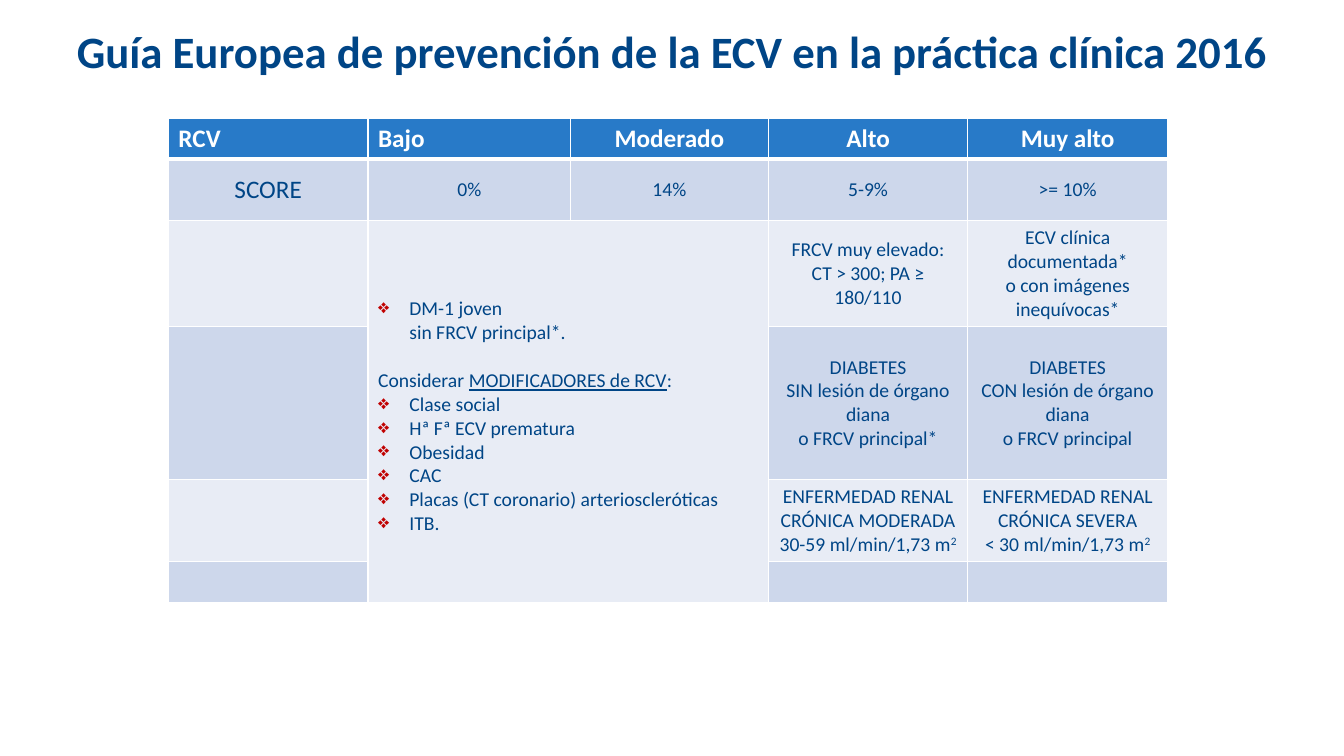
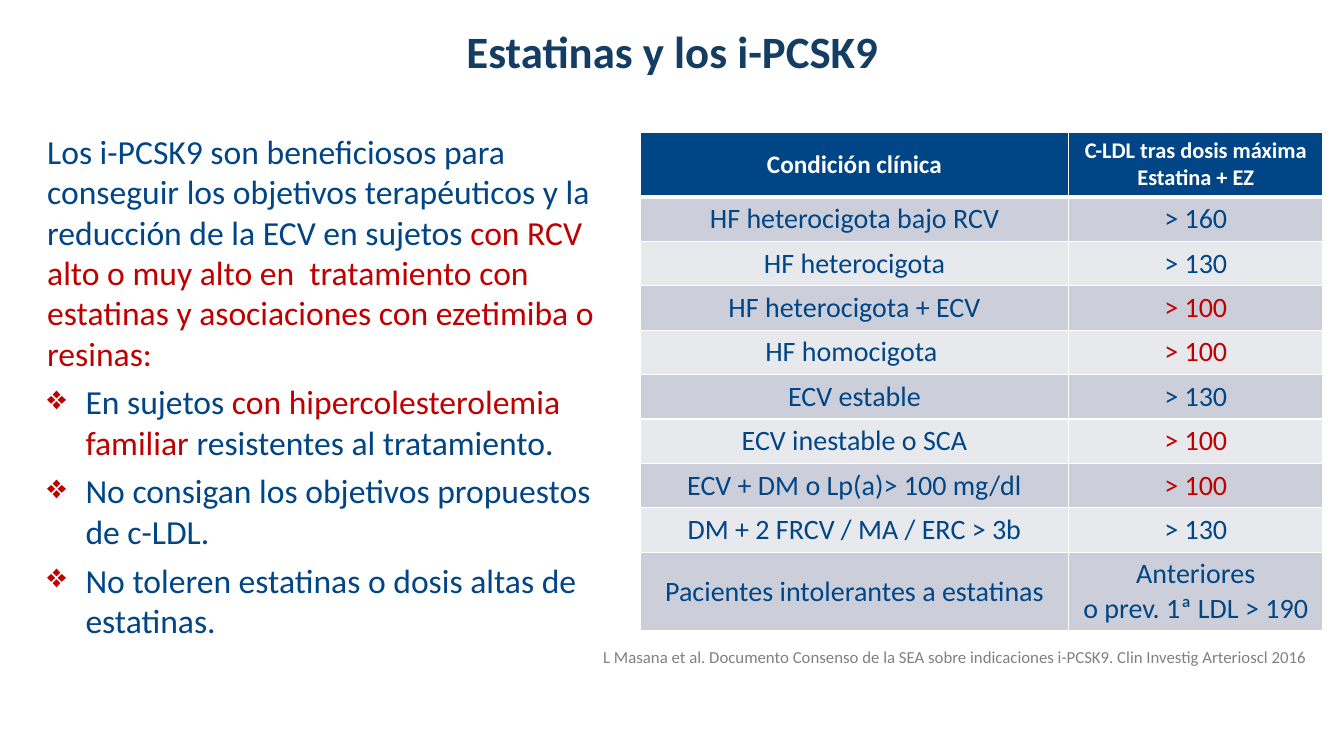
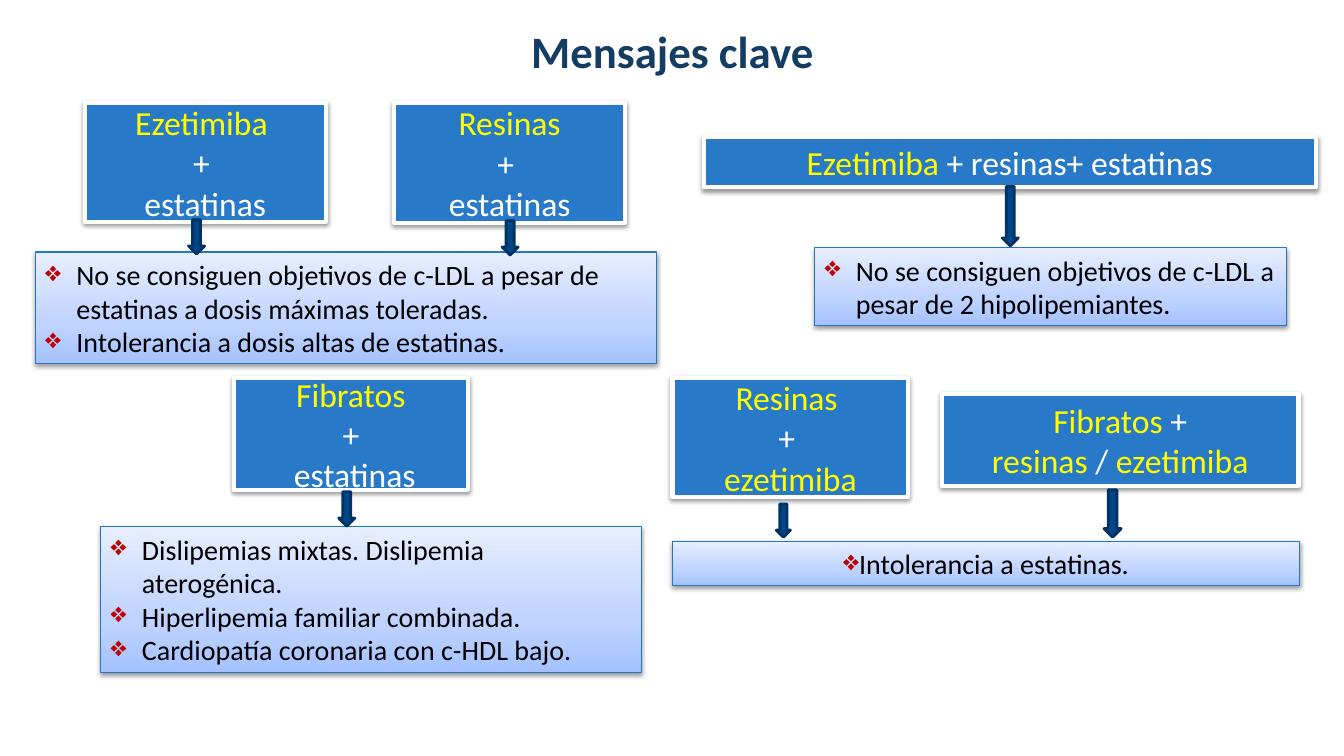
from copy import deepcopy

from lxml import etree
from pptx import Presentation
from pptx.dml.color import RGBColor
from pptx.enum.shapes import MSO_SHAPE
from pptx.enum.text import MSO_ANCHOR, PP_ALIGN
from pptx.oxml.ns import qn
from pptx.util import Inches, Pt

CENTER, LEFT, RIGHT = PP_ALIGN.CENTER, PP_ALIGN.LEFT, PP_ALIGN.RIGHT
MIDDLE, TOP = MSO_ANCHOR.MIDDLE, MSO_ANCHOR.TOP
RECTANGLE, DOWN_ARROW = MSO_SHAPE.RECTANGLE, MSO_SHAPE.DOWN_ARROW

COLORS = {
    "navy": "004586", "title": "143D64", "blue": "287AC8", "red": "C00000",
    "bullet": "C00000", "yellow": "FFFF00", "white": "FFFFFF", "black": "000000",
    "gray": "808080", "outline": "2377C8", "arrow_line": "003363",
    "risk_dark": "CDD7EB", "risk_light": "E8ECF5",
    "drug_dark": "CCCFD9", "drug_light": "E7E9ED",
}
GRADIENT = [(0, "A4C2FF"), (0.35, "BFD3FF"), (1, "E7EEFF")]
FONT = "Calibri"
BULLET = "❖"
BREAK = "\n"
RED = {"color": "red"}
YELLOW = {"color": "yellow"}
SUPERSCRIPT = {"baseline": "30000"}


def write_text(frame, paragraphs, align=CENTER, indent=0.31, space=0, **defaults):
    frame.word_wrap = True
    for index, runs in enumerate(paragraphs):
        paragraph = frame.add_paragraph() if index else frame.paragraphs[0]
        paragraph.alignment = align
        runs = [runs] if isinstance(runs, str) else list(runs)
        if runs[0] == BULLET:
            runs.pop(0)
            properties = paragraph._p.get_or_add_pPr()
            properties.set("marL", str(Inches(indent)))
            properties.set("indent", str(-Inches(indent)))
            color = etree.SubElement(properties, qn("a:buClr"))
            etree.SubElement(color, qn("a:srgbClr"), val=COLORS["bullet"])
            etree.SubElement(properties, qn("a:buChar"), char=BULLET)
        if index and space:
            paragraph.space_before = Pt(space)
        for item in runs:
            if item == BREAK:
                paragraph.add_line_break()
                etree.SubElement(paragraph._p[-1], qn("a:rPr"), sz=str(defaults["size"] * 100))
                continue
            text, changes = (item, {}) if isinstance(item, str) else item
            values = {"name": FONT, "bold": False, **defaults, **changes}
            run = paragraph.add_run()
            run.text = text
            run.font.color.rgb = RGBColor.from_string(COLORS[values.pop("color")])
            run.font.size = Pt(values.pop("size"))
            if "baseline" in values:
                run.font._element.set("baseline", values.pop("baseline"))
            for name, value in values.items():
                setattr(run.font, name, value)


def paint_cell(cell, color, top, bottom):
    properties = cell._tc.get_or_add_tcPr()
    for side, width in (("lnL", 1), ("lnR", 1), ("lnT", top), ("lnB", bottom)):
        line = etree.SubElement(properties, qn(f"a:{side}"), w=str(Pt(width)))
        fill = etree.SubElement(line, qn("a:solidFill"))
        etree.SubElement(fill, qn("a:srgbClr"), val=COLORS["white"])
    cell.fill.solid()
    cell.fill.fore_color.rgb = RGBColor.from_string(COLORS[color])


presentation = Presentation()
presentation.slide_width = Inches(13.33)
presentation.slide_height = Inches(7.5)

slides = []
for text, left, width, color in (
    ("Guía Europea de prevención de la ECV en la práctica clínica 2016", 0.29, 12.76, "navy"),
    ("Estatinas y los i-PCSK9", 0.67, 12, "title"),
    ("Mensajes clave", 0.67, 12, "title"),
):
    slide = presentation.slides.add_slide(presentation.slide_layouts[5])
    title = slide.shapes.title
    title.left, title.top = Inches(left), Inches(0.17)
    title.width, title.height = Inches(width), Inches(0.66)
    title.text_frame.vertical_anchor = MIDDLE
    write_text(title.text_frame, [text], size=32, color=color, bold=True)
    slides.append(slide)
risk_slide, statin_slide, message_slide = slides

modifiers = [
    [BULLET, "DM-1 joven", BREAK, "sin FRCV principal*."],
    ["Considerar ", ("MODIFICADORES de RCV", {"underline": True}), ":"],
    [BULLET, "Clase social"],
    [BULLET, "Hª Fª ECV prematura"],
    [BULLET, "Obesidad"],
    [BULLET, "CAC"],
    [BULLET, "Placas (CT coronario) arterioscleróticas"],
    [BULLET, "ITB."],
]
risk_rows = [
    [["RCV"], ["Bajo"], ["Moderado"], ["Alto"], ["Muy alto"]],
    [["SCORE"], ["0%"], ["14%"], ["5-9%"], [">= 10%"]],
    [[], modifiers, [],
     ["FRCV muy elevado:", "CT > 300; PA ≥ 180/110"],
     ["ECV clínica documentada*", "o con imágenes inequívocas*"]],
    [[], [], [],
     ["DIABETES", "SIN lesión de órgano diana", "o FRCV principal*"],
     ["DIABETES", "CON lesión de órgano diana", "o FRCV principal"]],
    [[], [], [],
     ["ENFERMEDAD RENAL CRÓNICA MODERADA", ["30-59 ml/min/1,73 m", ("2", SUPERSCRIPT)]],
     ["ENFERMEDAD RENAL CRÓNICA SEVERA", ["< 30 ml/min/1,73 m", ("2", SUPERSCRIPT)]]],
    [[], [], [], [], []],
]
statin_rows = [[["Condición clínica"], ["C-LDL tras dosis máxima Estatina + EZ"]]]
for condition, limit in (
    ("HF heterocigota bajo RCV", "> 160"),
    ("HF heterocigota", "> 130"),
    ("HF heterocigota + ECV", "> 100"),
    ("HF homocigota ", "> 100"),
    ("ECV estable", "> 130"),
    ("ECV inestable o SCA", "> 100"),
    ("ECV + DM o Lp(a)> 100 mg/dl", "> 100"),
    ("DM + 2 FRCV / MA / ERC > 3b", "> 130"),
):
    statin_rows.append([[condition], [[(limit, RED if limit == "> 100" else {})]]])
statin_rows.append([["Pacientes intolerantes a estatinas"], ["Anteriores", "o prev. 1ª LDL > 190"]])

table_plans = [
    {"slide": risk_slide, "at": (1.67, 1.17), "rows": risk_rows,
     "widths": [1.98, 2.01, 1.96, 1.98, 1.98], "heights": [0.41, 0.61, 1.05, 1.52, 0.8, 0.4],
     "fills": ("blue", "risk_dark", "risk_light"), "size": 14,
     "sizes": {(1, 0): 18}, "left_cells": [(0, 0), (0, 1), (2, 1)],
     "merge": ((2, 1), (5, 2))},
    {"slide": statin_slide, "at": (6.35, 1.31), "rows": statin_rows,
     "widths": [4.25, 2.52], "heights": [0.64] + [0.44] * 8 + [0.78],
     "fills": ("navy", "drug_dark", "drug_light"), "size": 20,
     "sizes": {(0, 1): 16}, "left_cells": [], "merge": None},
]
tables = []
for plan in table_plans:
    widths, heights = plan["widths"], plan["heights"]
    left, top = plan["at"]
    table = plan["slide"].shapes.add_table(
        len(heights), len(widths), Inches(left), Inches(top),
        Inches(sum(widths)), Inches(sum(heights))).table
    for column, width in zip(table.columns, widths):
        column.width = Inches(width)
    for row, height in zip(table.rows, heights):
        row.height = Inches(height)
    if plan["merge"]:
        start, end = plan["merge"]
        table.cell(*start).merge(table.cell(*end))
    header_fill, dark_fill, light_fill = plan["fills"]
    for row, contents in enumerate(plan["rows"]):
        header = row == 0
        fill = header_fill if header else dark_fill if row % 2 else light_fill
        for column, paragraphs in enumerate(contents):
            cell = table.cell(row, column)
            if cell.is_spanned:
                continue
            paint_cell(cell, fill, 3 if row == 1 else 1, 3 if header else 1)
            cell.vertical_anchor = MIDDLE
            write_text(
                cell.text_frame, paragraphs,
                align=LEFT if (row, column) in plan["left_cells"] else CENTER,
                size=plan["sizes"].get((row, column), 18 if header else plan["size"]),
                color="white" if header else "navy", bold=header)
    tables.append(table)

modifier_cell = tables[0].cell(2, 1)
modifier_cell.vertical_anchor = TOP
modifier_cell.margin_top = Inches(0.76)
modifier_cell.text_frame.paragraphs[1].space_before = Pt(17)

indications = [
    ["Los i-PCSK9 son beneficiosos para conseguir los objetivos terapéuticos y la reducción de la ECV en sujetos ",
     ("con RCV alto o muy alto en  tratamiento con estatinas y asociaciones con ezetimiba o resinas:", RED)],
    [BULLET, "En sujetos ", ("con hipercolesterolemia familiar ", RED), "resistentes al tratamiento."],
    [BULLET, "No consigan los objetivos propuestos de c-LDL."],
    [BULLET, "No toleren estatinas o dosis altas de estatinas."],
]
citation = ["L Masana et al. Documento Consenso de la SEA sobre indicaciones i-PCSK9. Clin Investig Arterioscl 2016"]
for box, paragraphs, values in (
    ((0.37, 1.25, 5.74, 5.02), indications,
     {"align": LEFT, "indent": 0.38, "space": 6, "size": 24, "color": "navy"}),
    ((0.39, 6.37, 12.67, 0.32), citation, {"align": RIGHT, "size": 12, "color": "gray"}),
):
    text_box = statin_slide.shapes.add_textbox(*map(Inches, box))
    write_text(text_box.text_frame, paragraphs, **values)

reason_style = {"line": "outline", "line_width": 0.75,
                "text": {"align": LEFT, "size": 20, "color": "black"}}
drug_style = {"line": "white", "line_width": 3, "text": {"size": 24, "color": "white"}}
centered_style = {**reason_style, "text": {**reason_style["text"], "align": CENTER, "indent": 0}}

message_boxes = [
    (reason_style, (0.35, 2.5, 6.16, 1.11),
     [[BULLET, "No se consiguen objetivos de c-LDL a pesar de estatinas a dosis máximas toleradas."],
      [BULLET, "Intolerancia a dosis altas de estatinas."]]),
    (centered_style, (6.67, 5.37, 6.22, 0.44), [[BULLET, "Intolerancia a estatinas."]]),
    (reason_style, (8.08, 2.46, 4.68, 0.77),
     [[BULLET, "No se consiguen objetivos de c-LDL a pesar de 2 hipolipemiantes."]]),
    (reason_style, (1, 5.22, 5.36, 1.45),
     [[BULLET, "Dislipemias mixtas. Dislipemia aterogénica."],
      [BULLET, "Hiperlipemia familiar combinada."],
      [BULLET, "Cardiopatía coronaria con c-HDL bajo."]]),
    (drug_style, (0.84, 1.02, 2.39, 1.18), [[("Ezetimiba ", YELLOW)], "+ ", "estatinas"]),
    (drug_style, (3.91, 1.02, 2.29, 1.19), [[("Resinas", YELLOW)], "+ ", "estatinas"]),
    (drug_style, (6.67, 3.75, 2.34, 1.18),
     [[("Resinas ", YELLOW)], "+ ", [("ezetimiba", YELLOW)]]),
    (drug_style, (6.98, 1.36, 6.07, 0.5), [[("Ezetimiba ", YELLOW), "+ resinas+ estatinas"]]),
    (drug_style, (2.32, 3.75, 2.32, 1.11), [[("Fibratos", YELLOW)], "+", " estatinas"]),
    (drug_style, (9.34, 3.91, 3.54, 0.91),
     [[("Fibratos ", YELLOW), "+"], [("resinas ", YELLOW), "/ ", ("ezetimiba", YELLOW)]]),
]
for style, box, paragraphs in message_boxes:
    shape = message_slide.shapes.add_shape(RECTANGLE, *map(Inches, box))
    if style is drug_style:
        shape.fill.solid()
        shape.fill.fore_color.rgb = RGBColor.from_string(COLORS["blue"])
    else:
        shape.fill.gradient()
        shape.fill.gradient_angle = 90
        stop_list = shape._element.spPr.find(".//" + qn("a:gsLst"))
        stop_list.insert(1, deepcopy(stop_list[0]))
        for stop, (position, color) in zip(shape.fill.gradient_stops, GRADIENT):
            stop.position = position
            stop.color.rgb = RGBColor.from_string(color)
    shape.line.color.rgb = RGBColor.from_string(COLORS[style["line"]])
    shape.line.width = Pt(style["line_width"])
    shape.shadow.inherit = False
    effects = shape._element.spPr.find(qn("a:effectLst"))
    shadow = etree.SubElement(effects, qn("a:outerShdw"), blurRad="40000", dist="20000",
                              dir="5400000", rotWithShape="0")
    shadow_color = etree.SubElement(shadow, qn("a:srgbClr"), val=COLORS["black"])
    etree.SubElement(shadow_color, qn("a:alpha"), val="38000")
    shape.text_frame.vertical_anchor = MIDDLE
    write_text(shape.text_frame, paragraphs, **style["text"])

for box in (
    (3.36, 4.88, 0.16, 0.34), (1.87, 2.18, 0.16, 0.34), (4.98, 2.19, 0.16, 0.34),
    (7.7, 5, 0.14, 0.33), (10.95, 4.86, 0.17, 0.47), (9.94, 1.85, 0.16, 0.59),
):
    arrow = message_slide.shapes.add_shape(DOWN_ARROW, *map(Inches, box))
    arrow.shadow.inherit = False
    arrow.fill.solid()
    arrow.fill.fore_color.rgb = RGBColor.from_string(COLORS["navy"])
    arrow.line.color.rgb = RGBColor.from_string(COLORS["arrow_line"])
    arrow.line.width = Pt(2)

presentation.save("out.pptx")
